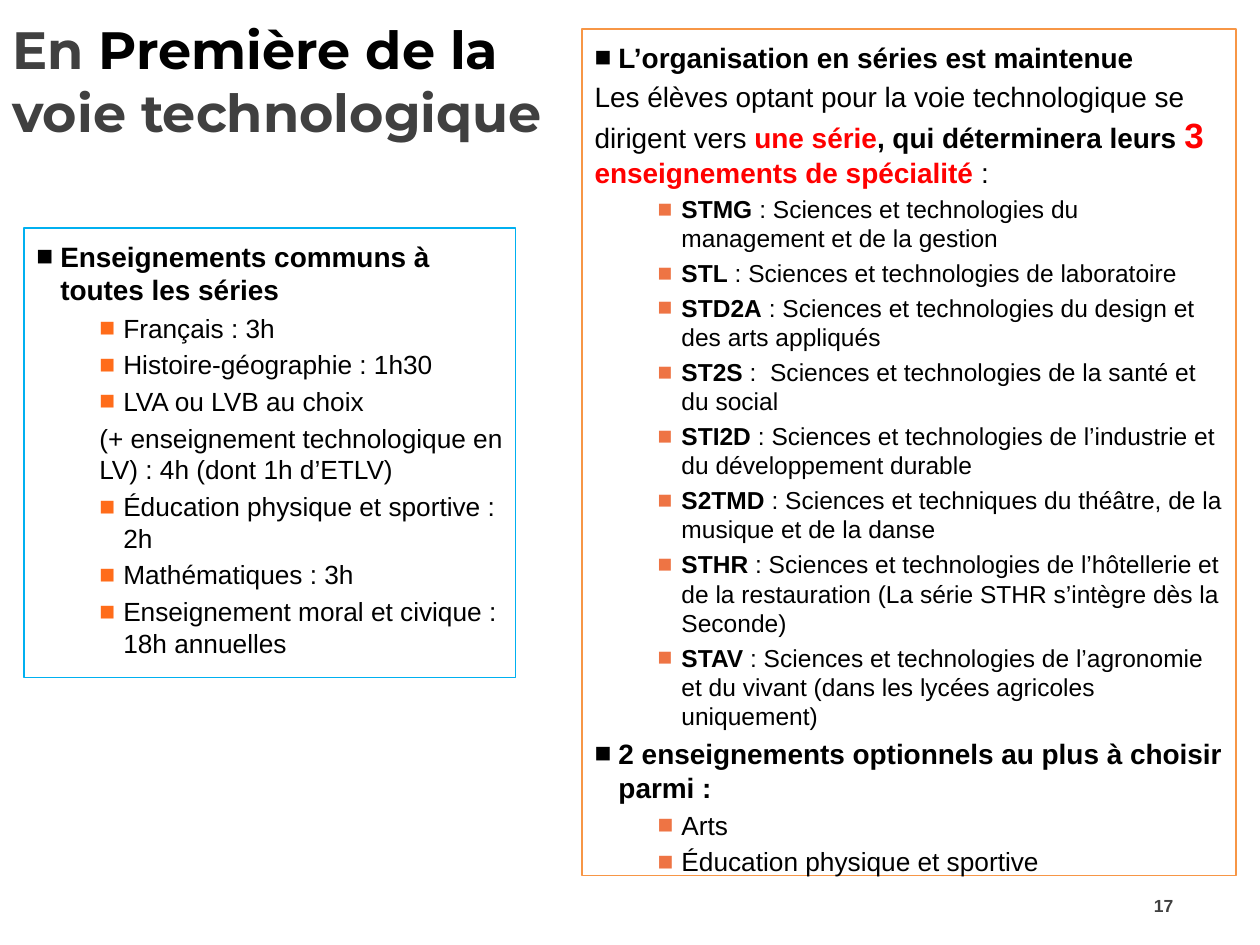
import pptx
import pptx.util
import pptx.dml.color
import pptx.enum.shapes
import pptx.enum.text
import pptx.oxml
import pptx.oxml.ns

RGB = pptx.dml.color.RGBColor
BLACK = RGB(0x00, 0x00, 0x00)
GREY = RGB(0x40, 0x40, 0x40)
RED = RGB(0xFF, 0x00, 0x00)
BLUE = RGB(0x00, 0xB0, 0xF0)
AMBER = RGB(0xF7, 0x96, 0x46)
ORANGE = RGB(0xFF, 0x6C, 0x1A)
CORAL = RGB(0xEE, 0x74, 0x44)

Pt = pptx.util.Pt
Inches = pptx.util.Inches
deck = pptx.Presentation()
deck.slide_width, deck.slide_height = Inches(10), Inches(7.5)
slide = deck.slides.add_slide(deck.slide_layouts[6])

# Grid: 100 columns by 75 rows
COL = deck.slide_width / 100
ROW = deck.slide_height / 75
HANG = 1.9 * COL
DEEP = 6.9 * COL


def write(par, text, size=16, bold=False, color=BLACK, font="Arial"):
    run = par.add_run()
    run.text = text
    run.font.size = Pt(size)
    run.font.bold = bold
    run.font.color.rgb = color
    run.font.name = font


def start(frame, mark=None, left=0, gap=3):
    """Open a paragraph, with a square bullet if a mark colour is given."""
    if frame.text:
        par = frame.add_paragraph()
        par.space_before = Pt(gap)
    else:
        par = frame.paragraphs[0]
    props = par._p.get_or_add_pPr()
    props.set("marL", str(int(left)))
    props.set("indent", str(int(-HANG if mark else 0)))
    if mark:
        par.level = 1 if left == DEEP else 0
        space = pptx.oxml.ns.nsdecls("a")
        for part in (
            f'<a:buClr {space}><a:srgbClr val="{mark}"/></a:buClr>',
            f'<a:buFont {space} typeface="Arial"/>',
            f'<a:buChar {space} char="■"/>',
        ):
            props.append(pptx.oxml.parse_xml(part))
    return par


# Title and page number
title = slide.shapes.add_textbox(0, int(0.9 * ROW), int(49.6 * COL), int(8.4 * ROW)).text_frame
title.word_wrap = True
par = title.paragraphs[0]
for text, color in (("En ", GREY), ("Première de la ", BLACK), ("voie technologique", GREY)):
    write(par, text, size=30, bold=True, color=color, font="Montserrat")

page = slide.shapes.add_textbox(int(89.7 * COL), int(69.9 * ROW), int(4.4 * COL), int(4 * ROW)).text_frame
page.word_wrap = True
page.vertical_anchor = pptx.enum.text.MSO_ANCHOR.MIDDLE
par = page.paragraphs[0]
par.alignment = pptx.enum.text.PP_ALIGN.RIGHT
write(par, "17", size=10, bold=True, color=GREY)

# Framed panels
panels = []
for left, top, wide, high, color, line in (
    (1.9, 18.1, 39, 35.7, BLUE, 0),
    (46.2, 2.3, 51.9, 67.2, AMBER, 0.75),
):
    panel = slide.shapes.add_shape(
        pptx.enum.shapes.MSO_SHAPE.RECTANGLE,
        int(left * COL), int(top * ROW), int(wide * COL), int(high * ROW),
    )
    panel.shadow.inherit = False
    panel.fill.background()
    panel.line.color.rgb = color
    panel.line.width = Pt(line)
    frame = panel.text_frame
    frame.word_wrap = True
    frame.vertical_anchor = pptx.enum.text.MSO_ANCHOR.TOP
    frame.margin_top = Inches(0.09)
    frame.paragraphs[0].alignment = pptx.enum.text.PP_ALIGN.LEFT
    panels.append(frame)
common, series = panels

# Common lessons
write(start(common, BLACK, HANG), "Enseignements communs à toutes les séries", bold=True)
for text, mark in (
    ("Français : 3h", ORANGE),
    ("Histoire-géographie : 1h30", ORANGE),
    ("LVA ou LVB au choix", ORANGE),
    ("(+ enseignement technologique en LV) : 4h (dont 1h d’ETLV)", None),
    ("Éducation physique et sportive : 2h", ORANGE),
    ("Mathématiques : 3h", ORANGE),
    ("Enseignement moral et civique : 18h annuelles", ORANGE),
):
    par = start(common, mark, DEEP if mark else 5 * COL)
    par.alignment = pptx.enum.text.PP_ALIGN.LEFT
    write(par, text, size=15)

# Series and options
write(start(series, BLACK, HANG), "L’organisation en séries est maintenue", bold=True)
par = start(series, gap=3.2)
write(par, "Les élèves optant pour la voie technologique se dirigent vers ")
write(par, "une série", bold=True, color=RED)
write(par, ", qui déterminera leurs ", bold=True)
write(par, "3", size=20, bold=True, color=RED)
write(par, " enseignements de spécialité ", bold=True, color=RED)
write(par, ":")

for code, text in (
    ("STMG", " : Sciences et technologies du management et de la gestion"),
    ("STL", " : Sciences et technologies de laboratoire"),
    ("STD2A", " : Sciences et technologies du design et des arts appliqués"),
    ("ST2S", " :  Sciences et technologies de la santé et du social"),
    ("STI2D", " : Sciences et technologies de l’industrie et du développement durable"),
    ("S2TMD", " : Sciences et techniques du théâtre, de la musique et de la danse"),
    ("STHR", " : Sciences et technologies de l’hôtellerie et de la restauration "
             "(La série STHR s’intègre dès la Seconde)"),
    ("STAV", " : Sciences et technologies de l’agronomie et du vivant "
             "(dans les lycées agricoles uniquement)"),
):
    par = start(series, CORAL, DEEP)
    write(par, code, size=14, bold=True)
    write(par, text, size=14)

par = start(series, BLACK, HANG, gap=3.2)
write(par, "2 enseignements optionnels au plus à choisir parmi :", bold=True)
for text in ("Arts", "Éducation physique et sportive"):
    write(start(series, CORAL, DEEP), text, size=15)

for frame in panels:
    for par in frame.paragraphs:
        par.alignment = pptx.enum.text.PP_ALIGN.LEFT

deck.save("out.pptx")
